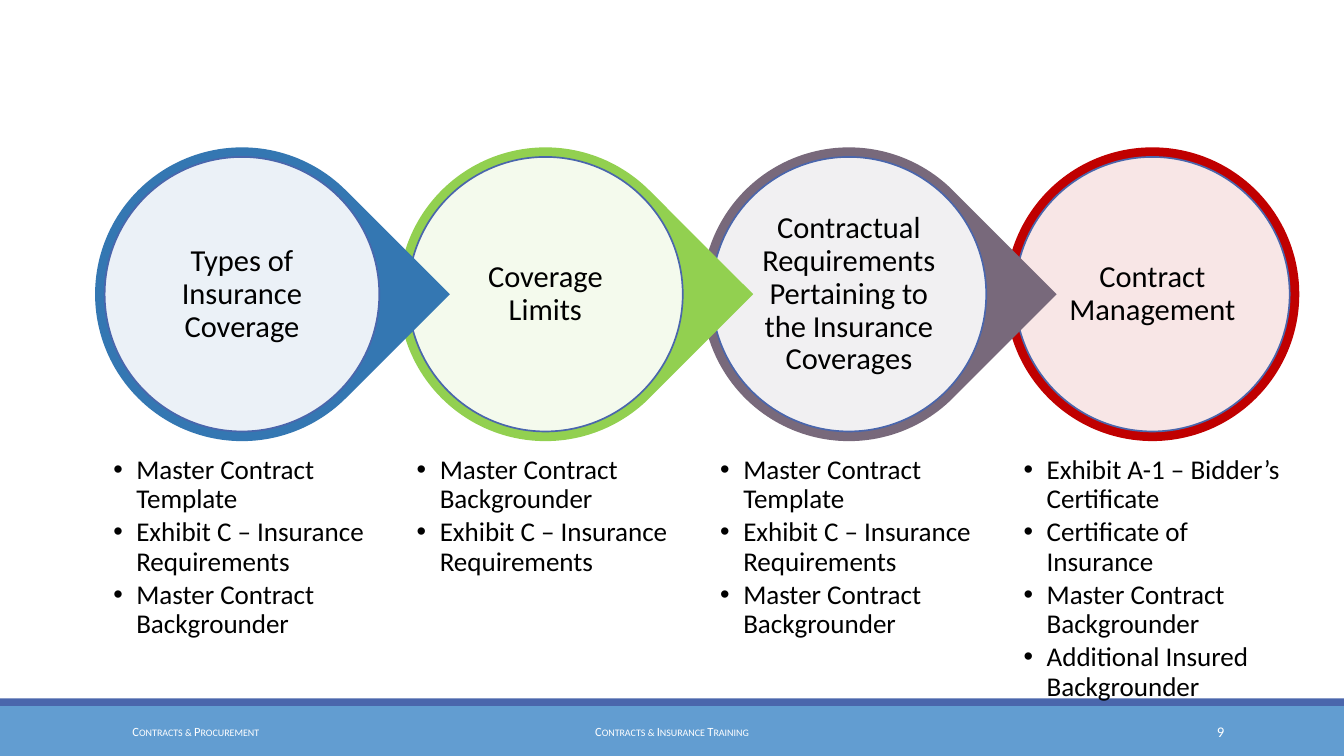
import pptx
import pptx.util
import pptx.dml.color
import pptx.enum.shapes
import pptx.enum.text
import pptx.oxml.ns
import lxml.etree

Cm = pptx.util.Cm
Pt = pptx.util.Pt
KIND = pptx.enum.shapes.MSO_SHAPE
ALIGN = pptx.enum.text.PP_ALIGN
ANCHOR = pptx.enum.text.MSO_ANCHOR
qn = pptx.oxml.ns.qn

STEPS = [
    ("Types of Insurance Coverage", "3477B2", [
        "Master Contract Template",
        "Exhibit C – Insurance Requirements",
        "Master Contract Backgrounder"]),
    ("Coverage Limits", "92D050", [
        "Master Contract Backgrounder",
        "Exhibit C – Insurance Requirements"]),
    ("Contractual Requirements Pertaining to the Insurance Coverages", "78697B", [
        "Master Contract Template",
        "Exhibit C – Insurance Requirements",
        "Master Contract Backgrounder"]),
    ("Contract Management", "C00000", [
        "Exhibit A-1 – Bidder’s Certificate",
        "Certificate of Insurance",
        "Master Contract Backgrounder",
        "Additional Insured Backgrounder"]),
]
FOOTER = [
    ("Contracts & Procurement", 2.51, 5.66, ALIGN.LEFT, 7.4, True),
    ("Contracts & Insurance Training", 8.46, 11.07, ALIGN.CENTER, 7.4, True),
    ("9", 22.73, 3.02, ALIGN.RIGHT, 8.7, False),
]
BARS = [(14.71, 1.04, "629DD1"), (14.55, 0.16, "4A66AC")]
WIDE, HIGH = 27.99, 15.75
LEFT, TOP, PITCH = 1.98, 3.07, 6.32
RING, RIM = 6.12, 0.2
DISC = RING - 2 * RIM
LIST_TOP, LIST_HIGH = 9.32, 3.35


def color(code):
    return pptx.dml.color.RGBColor.from_string(code)


def add_shape(kind, x, y, w, h, fill):
    shape = slide.shapes.add_shape(kind, Cm(x), Cm(y), Cm(w), Cm(h))
    shape.shadow.inherit = False
    shape.fill.solid()
    shape.fill.fore_color.rgb = color(fill)
    shape.line.fill.background()
    return shape


def add_box(x, y, w, h):
    return slide.shapes.add_textbox(Cm(x), Cm(y), Cm(w), Cm(h))


def set_frame(frame, inset, anchor):
    frame.word_wrap = True
    frame.vertical_anchor = anchor
    frame.margin_left = frame.margin_right = Cm(inset)
    frame.margin_top = frame.margin_bottom = Cm(inset)


def style(frame, size, ink, align, space=1.0, after=0):
    for para in frame.paragraphs:
        para.alignment = align
        para.line_spacing = space
        para.space_after = Pt(after)
        for run in para.runs:
            run.font.name = "Calibri"
            run.font.size = Pt(size)
            run.font.color.rgb = color(ink)


def add_disc(x, y, title):
    disc = add_shape(KIND.OVAL, x, y, DISC, DISC, "FFFFFF")
    tint = disc.fill._xPr.find(qn("a:solidFill"))[0]
    lxml.etree.SubElement(tint, qn("a:alpha")).set("val", "90000")
    disc.line.color.rgb = color("4A66AC")
    disc.line.width = Pt(1)
    disc.text_frame.text = title
    set_frame(disc.text_frame, 0.08, ANCHOR.MIDDLE)
    style(disc.text_frame, 18, "000000", ALIGN.CENTER, 0.9)


def add_list(x, items):
    frame = add_box(x, LIST_TOP, DISC, LIST_HIGH).text_frame
    frame.text = "\n".join(items)
    set_frame(frame, 0.18, ANCHOR.TOP)
    style(frame, 16, "000000", ALIGN.LEFT, 0.9, 2.4)
    for para in frame.paragraphs:
        props = para._p.get_or_add_pPr()
        props.set("marL", str(Cm(0.48)))
        props.set("indent", str(-Cm(0.48)))
        lxml.etree.SubElement(props, qn("a:buFont")).set("typeface", "Arial")
        lxml.etree.SubElement(props, qn("a:buChar")).set("char", "•")


deck = pptx.Presentation()
deck.slide_width, deck.slide_height = Cm(WIDE), Cm(HIGH)
slide = deck.slides.add_slide(deck.slide_layouts[6])

for y, h, fill in BARS:
    add_shape(KIND.RECTANGLE, 0, y, WIDE, h, fill)

for text, x, w, align, size, small in FOOTER:
    frame = add_box(x, 14.83, w, 0.84).text_frame
    frame.text = text
    frame.word_wrap = True
    frame.vertical_anchor = ANCHOR.MIDDLE
    style(frame, size, "FFFFFF", align)
    if small:
        frame.paragraphs[0].runs[0].font._element.set("cap", "small")

last = len(STEPS) - 1
for i, (title, fill, items) in reversed(list(enumerate(STEPS))):
    x = LEFT + i * PITCH
    kind = KIND.OVAL if i == last else KIND.TEAR
    ring = add_shape(kind, x, TOP, RING, RING, fill)
    ring.rotation = 0 if i == last else 45
    add_disc(x + RIM, TOP + RIM, title)
    add_list(x + RIM, items)

deck.save("out.pptx")
